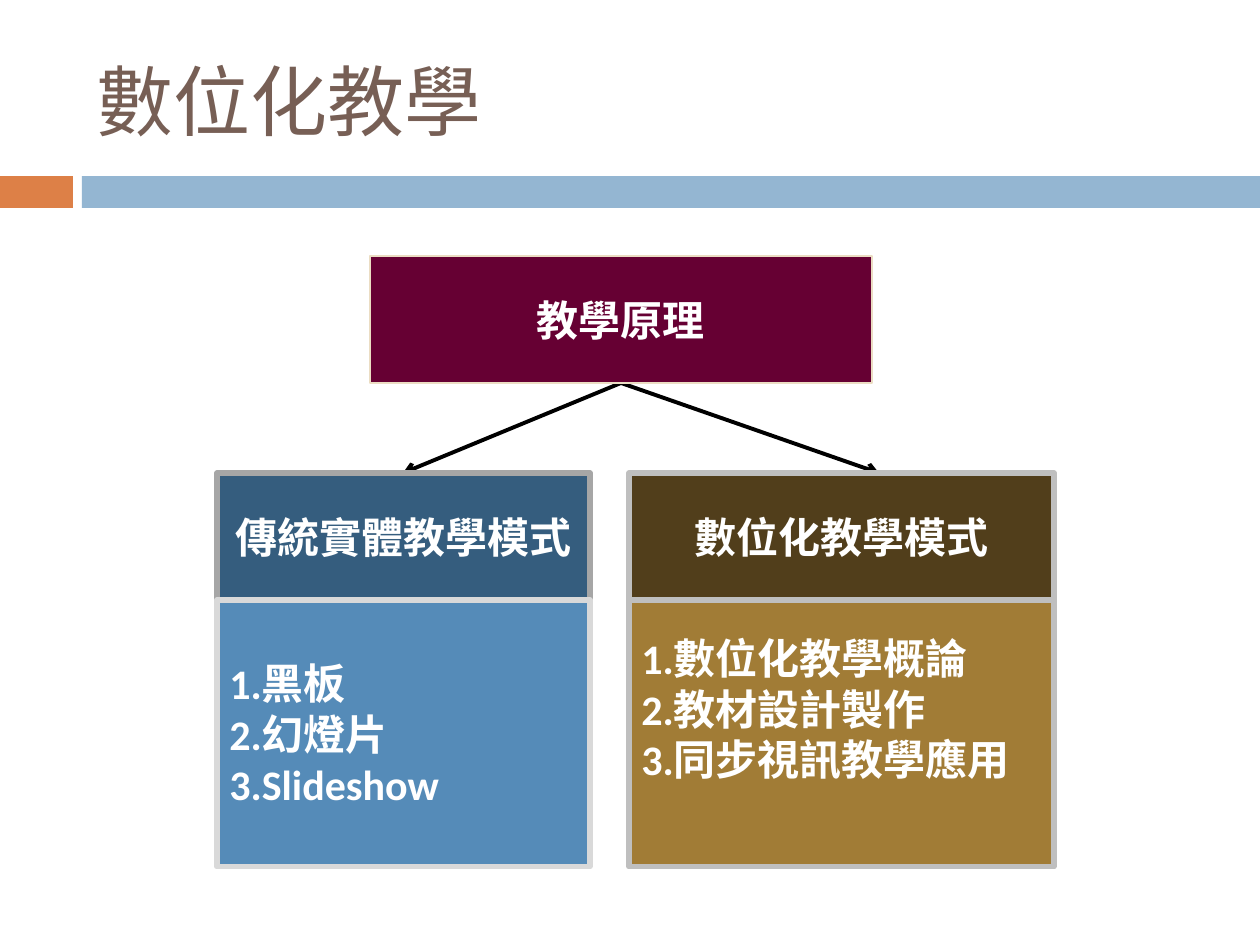
from lxml.etree import SubElement
from pptx import Presentation
from pptx.dml.color import RGBColor
from pptx.enum.shapes import MSO_CONNECTOR, MSO_SHAPE
from pptx.enum.text import MSO_ANCHOR, PP_ALIGN
from pptx.oxml.ns import qn
from pptx.util import Inches, Pt

COLORS = {
    "orange": "DD8047", "sky": "94B6D2", "title": "775F55",
    "wine": "660033", "cream": "EBDDC3",
    "navy": "355D7E", "blue": "558BB8", "brown": "513E1B", "ochre": "A17C36",
    "gray": "A6A6A6", "silver": "BFBFBF", "pale": "D9D9D9",
    "white": "FFFFFF", "black": "000000",
}
FONT = "Calibri"


def px(n):
    return round(n * Inches(1) / 126)


def rgb(name):
    return RGBColor.from_string(COLORS[name])


class Deck:
    def __init__(self, prs):
        self.s = prs.slides.add_slide(prs.slide_layouts[5])

    def style(self, tf, size, color, bold, align):
        tf.word_wrap = True
        tf.vertical_anchor = MSO_ANCHOR.MIDDLE
        for p in tf.paragraphs:
            p.alignment = align
            for r in p.runs:
                r.font.name, r.font.size, r.font.bold = FONT, Pt(size), bold
                r.font.color.rgb = rgb(color)

    def title(self, text, x, y, w, h):
        sp = self.s.shapes.title
        sp.left, sp.top, sp.width, sp.height = map(px, (x, y, w, h))
        sp.text_frame.text = text
        self.style(sp.text_frame, 44, "title", False, PP_ALIGN.LEFT)

    def rect(self, x, y, w, h, fill, line=None, weight=3):
        sp = self.s.shapes.add_shape(MSO_SHAPE.RECTANGLE, *map(px, (x, y, w, h)))
        sp.shadow.inherit = False
        sp.fill.solid()
        sp.fill.fore_color.rgb = rgb(fill)
        if line:
            sp.line.color.rgb = rgb(line)
            sp.line.width = Pt(weight)
        else:
            sp.line.fill.background()
        return sp

    def box(self, text, x, y, w, h, fill, line, weight=3, align=PP_ALIGN.CENTER, lift=0):
        tf = self.rect(x, y, w, h, fill, line, weight).text_frame
        tf.text = text
        tf.margin_bottom = px(6 + lift)
        self.style(tf, 24, "white", True, align)

    def arrow(self, x1, y1, x2, y2):
        c = self.s.shapes.add_connector(MSO_CONNECTOR.STRAIGHT, *map(px, (x1, y1, x2, y2)))
        c.line.color.rgb = rgb("black")
        c.line.width = Pt(2.25)
        SubElement(c.line._get_or_add_ln(), qn("a:tailEnd"), type="arrow")
        SubElement(c._element.spPr, qn("a:effectLst"))


def main():
    prs = Presentation()
    prs.slide_width, prs.slide_height = Inches(10), Inches(7.5)
    deck = Deck(prs)

    # Title and band
    deck.rect(0, 176, 73, 32, "orange")
    deck.rect(82, 176, 1178, 32, "sky")
    deck.title("數位化教學", 84, 32, 1124, 136)

    # Root with an arrow to each teaching mode
    root_x, root_y, root_w, head_h = 370, 256, 502, 127
    head_y, body_h = 473, 267
    for tip_x in (403, 879):
        deck.arrow(root_x + root_w // 2, root_y + head_h, tip_x, head_y)
    deck.box("教學原理", root_x, root_y, root_w, head_h, "wine", "cream", 1.5)

    # Teaching modes: x, width, heading, items, heading and body colours, lift of items
    modes = [
        (217, 373, "傳統實體教學模式", ["黑板", "幻燈片", "Slideshow"],
         ("navy", "gray"), ("blue", "pale"), 0),
        (629, 425, "數位化教學模式", ["數位化教學概論", "教材設計製作", "同步視訊教學應用"],
         ("brown", "silver"), ("ochre", "silver"), 50),
    ]
    for x, w, heading, items, head_colors, body_colors, lift in modes:
        listing = "\n".join(f"{i}.{item}" for i, item in enumerate(items, 1))
        deck.box(heading, x, head_y, w, head_h, *head_colors)
        deck.box(listing, x, head_y + head_h, w, body_h, *body_colors,
                 align=PP_ALIGN.LEFT, lift=lift)

    prs.save("out.pptx")


if __name__ == "__main__":
    main()
